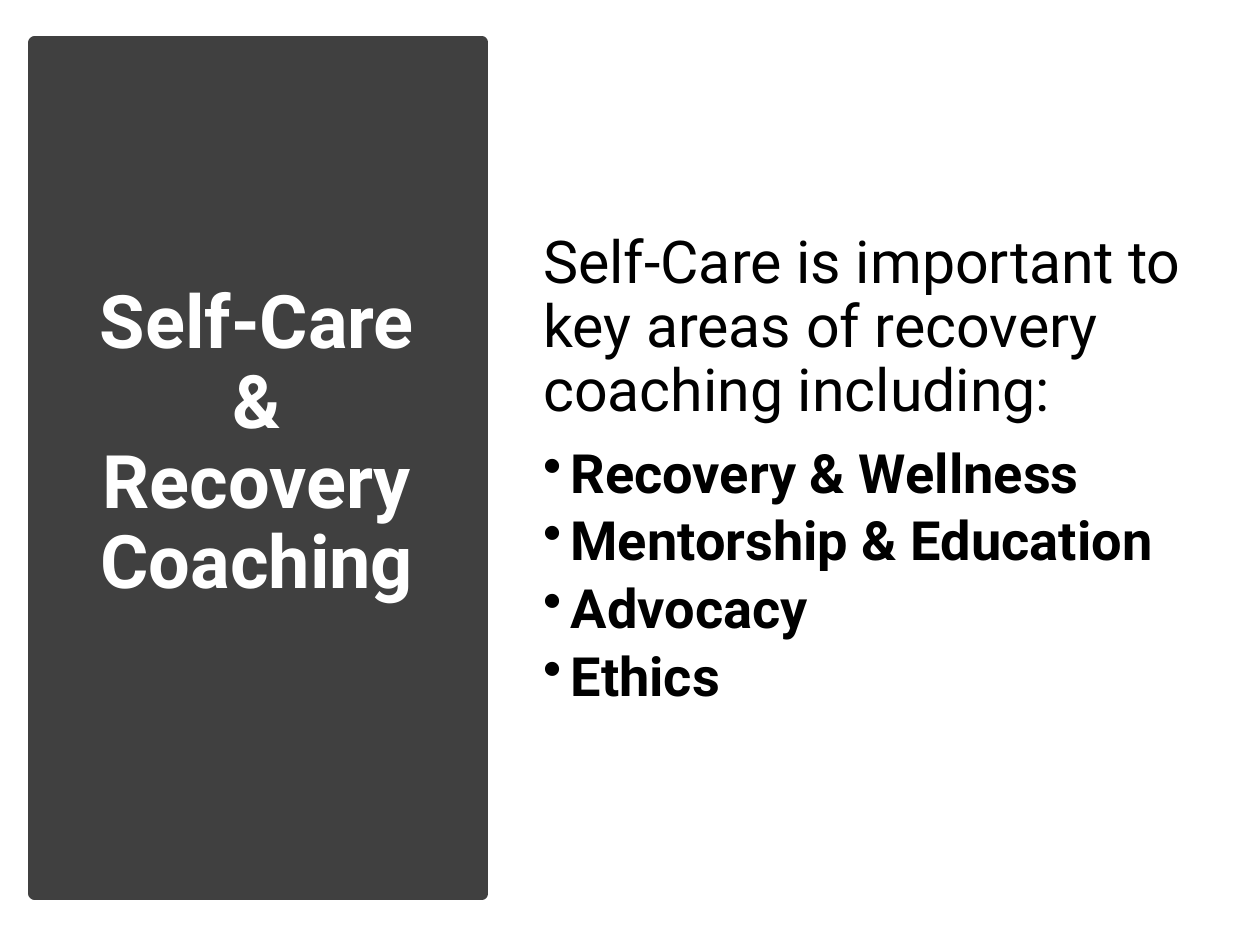
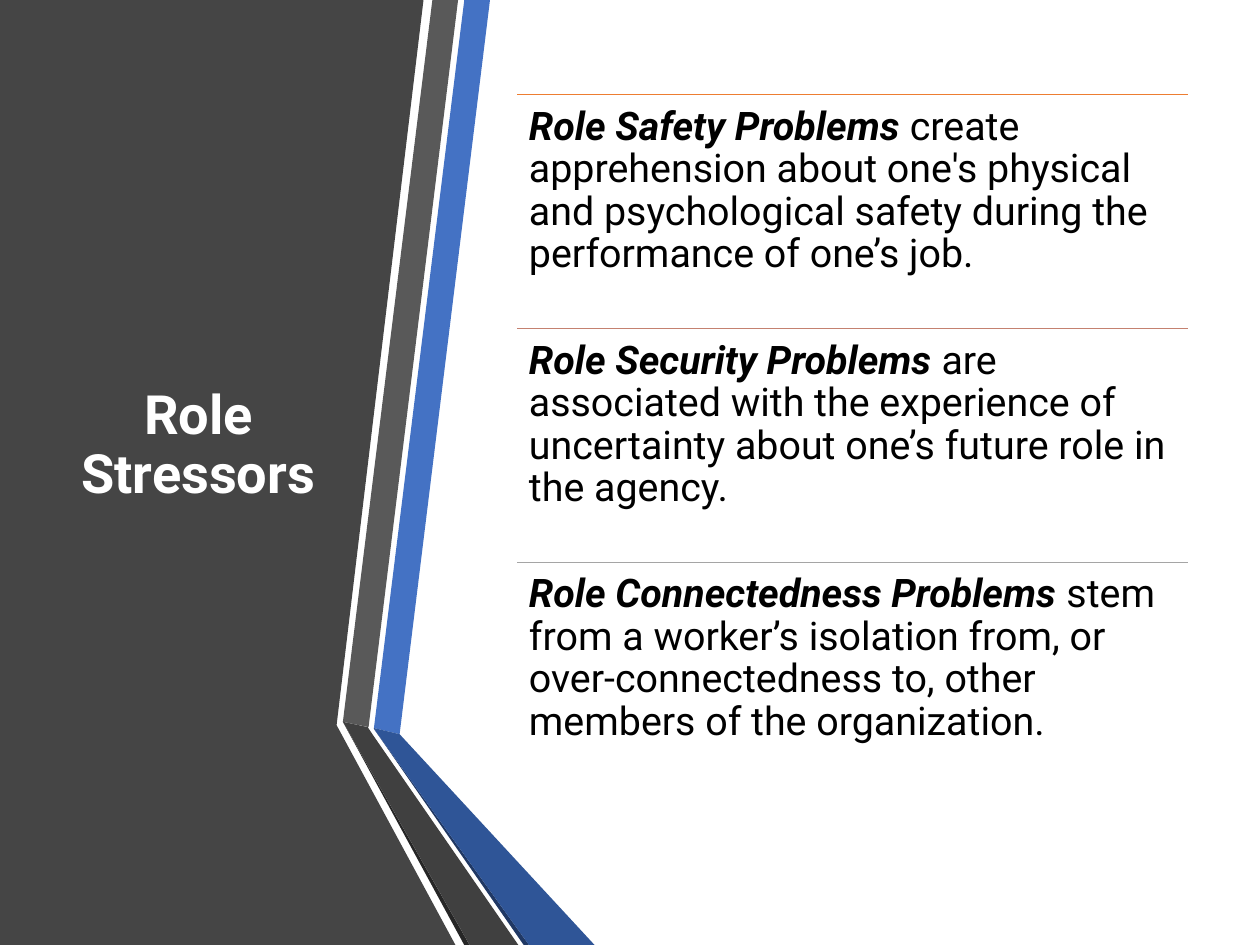
from dataclasses import dataclass

from lxml import etree
from pptx import Presentation
from pptx.dml.color import RGBColor
from pptx.enum.shapes import MSO_CONNECTOR, MSO_SHAPE
from pptx.enum.text import MSO_ANCHOR, PP_ALIGN
from pptx.oxml.ns import qn
from pptx.util import Emu, Pt

# Shared style: 100 px to the inch
PX = 9144
SLIDE_WIDTH, SLIDE_HEIGHT = 1422, 1067
FONT = "Roboto"
BLACK, WHITE, DARK = "000000", "FFFFFF", "404040"
LINE_SPACING = 0.9
MIDDLE, TOP = MSO_ANCHOR.MIDDLE, MSO_ANCHOR.TOP
CENTER, LEFT = PP_ALIGN.CENTER, PP_ALIGN.LEFT
RECTANGLE, STRAIGHT = MSO_SHAPE.RECTANGLE, MSO_CONNECTOR.STRAIGHT
BULLET_INDENT = 31


@dataclass(frozen=True)
class Area:
    left: int
    top: int
    width: int
    height: int


@dataclass(frozen=True)
class Facet:
    color: str
    points: tuple[tuple[int, int], ...]


@dataclass(frozen=True)
class Stressor:
    color: str
    name: str
    effect: str


BULLETS = ("Recovery & Wellness", "Mentorship & Education", "Advocacy", "Ethics")

# Folded ribbon, from back to front
FACETS = (
    Facet("454545", ((376, 0), (478, 0), (380, 818), (380, 819), (514, 1067), (0, 1067), (0, 0))),
    Facet("4472C4", ((422, 822), (451, 829), (553, 0), (524, 0))),
    Facet("595959", ((517, 0), (488, 0), (387, 815), (416, 821))),
    Facet("262626", ((387, 815), (524, 1067), (530, 1067))),
    Facet("203864", ((422, 823), (591, 1067), (597, 1067))),
    Facet("2F5597", ((422, 823), (597, 1067), (671, 1067), (451, 829), (422, 822))),
    Facet(DARK, ((585, 1067), (421, 830), (415, 821), (387, 815), (530, 1067))),
)

STRESSORS = (
    Stressor("ED7D31", "Role Safety Problems ",
             "create apprehension about one's physical and psychological safety "
             "during the performance of one’s job."),
    Stressor("C48170", "Role Security Problems ",
             "are associated with the experience of uncertainty about one’s "
             "future role in the agency."),
    Stressor("A5A5A5", "Role Connectedness Problems ",
             "stem from a worker’s isolation from, or over-connectedness to, "
             "other members of the organization."),
)


def px(length: int) -> Emu:
    return Emu(length * PX)


def rgb(color: str) -> RGBColor:
    return RGBColor.from_string(color)


def place(area: Area) -> tuple[Emu, Emu, Emu, Emu]:
    return px(area.left), px(area.top), px(area.width), px(area.height)


def paint(shape, color: str, line_width: int = 0) -> None:
    shape.shadow.inherit = False
    shape.fill.solid()
    shape.fill.fore_color.rgb = rgb(color)
    if line_width:
        shape.line.color.rgb = rgb(color)
        shape.line.width = Pt(line_width)
    else:
        shape.line.fill.background()


def add_text_frame(page, area: Area, anchor, inset: int | None = None):
    frame = page.shapes.add_textbox(*place(area)).text_frame
    frame.word_wrap = True
    frame.vertical_anchor = anchor
    if inset is not None:
        frame.margin_left = frame.margin_top = px(inset)
        frame.margin_right = frame.margin_bottom = px(inset)
    return frame


def style(para, size: int, color: str = BLACK, bold: bool | None = None,
          align=LEFT, after: float = 0) -> None:
    para.alignment = align
    para.line_spacing = LINE_SPACING
    para.space_after = Pt(after)
    para.font.name = FONT
    para.font.size = Pt(size)
    para.font.color.rgb = rgb(color)
    para.font.bold = bold


def add_title(page, area: Area, text: str, size: int) -> None:
    para = add_text_frame(page, area, MIDDLE).paragraphs[0]
    para.text = text
    style(para, size, WHITE, True, CENTER)


def add_bullet(frame, text: str) -> None:
    para = frame.add_paragraph()
    para.text = text
    para.level = 1
    properties = para._p.get_or_add_pPr()
    properties.set("marL", str(px(BULLET_INDENT)))
    properties.set("indent", str(-px(BULLET_INDENT)))
    etree.SubElement(properties, qn("a:buChar"), char="•")
    style(para, 44, bold=True, after=7.5)


def add_facet(page, facet: Facet) -> None:
    builder = page.shapes.build_freeform(*facet.points[0], scale=PX)
    builder.add_line_segments(facet.points[1:], close=True)
    paint(builder.convert_to_shape(), facet.color)


def add_stressor(page, area: Area, stressor: Stressor) -> None:
    left, top, width, _ = place(area)
    rule = page.shapes.add_connector(STRAIGHT, left, top, left + width, top)
    rule.line.color.rgb = rgb(stressor.color)
    rule.line.width = Pt(1)
    etree.SubElement(rule._element.spPr, qn("a:effectLst"))
    para = add_text_frame(page, area, TOP, 13).paragraphs[0]
    style(para, 32)
    name = para.add_run()
    name.text = stressor.name
    name.font.bold = name.font.italic = True
    para.add_run().text = stressor.effect


def add_page(deck):
    page = deck.slides.add_slide(deck.slide_layouts[6])
    page.background.fill.solid()
    page.background.fill.fore_color.rgb = rgb(WHITE)
    return page


def build_self_care(deck) -> None:
    page = add_page(deck)
    panel = page.shapes.add_shape(RECTANGLE, *place(Area(39, 48, 505, 961)))
    paint(panel, DARK, 10)
    add_title(page, Area(87, 116, 406, 772), "Self-Care & Recovery Coaching", 60)
    frame = add_text_frame(page, Area(606, 151, 760, 760), MIDDLE, 7)
    intro = frame.paragraphs[0]
    intro.text = "Self-Care is important to key areas of recovery coaching including:"
    style(intro, 48, after=18)
    for text in BULLETS:
        add_bullet(frame, text)


def build_role_stressors(deck) -> None:
    page = add_page(deck)
    for facet in FACETS:
        add_facet(page, facet)
    add_title(page, Area(62, 107, 324, 794), "Role Stressors", 44)
    row_height = 264
    for row, stressor in enumerate(STRESSORS):
        area = Area(584, 107 + row * row_height, 757, row_height)
        add_stressor(page, area, stressor)


def main() -> None:
    deck = Presentation()
    deck.slide_width, deck.slide_height = px(SLIDE_WIDTH), px(SLIDE_HEIGHT)
    build_self_care(deck)
    build_role_stressors(deck)
    deck.save("out.pptx")


if __name__ == "__main__":
    main()
